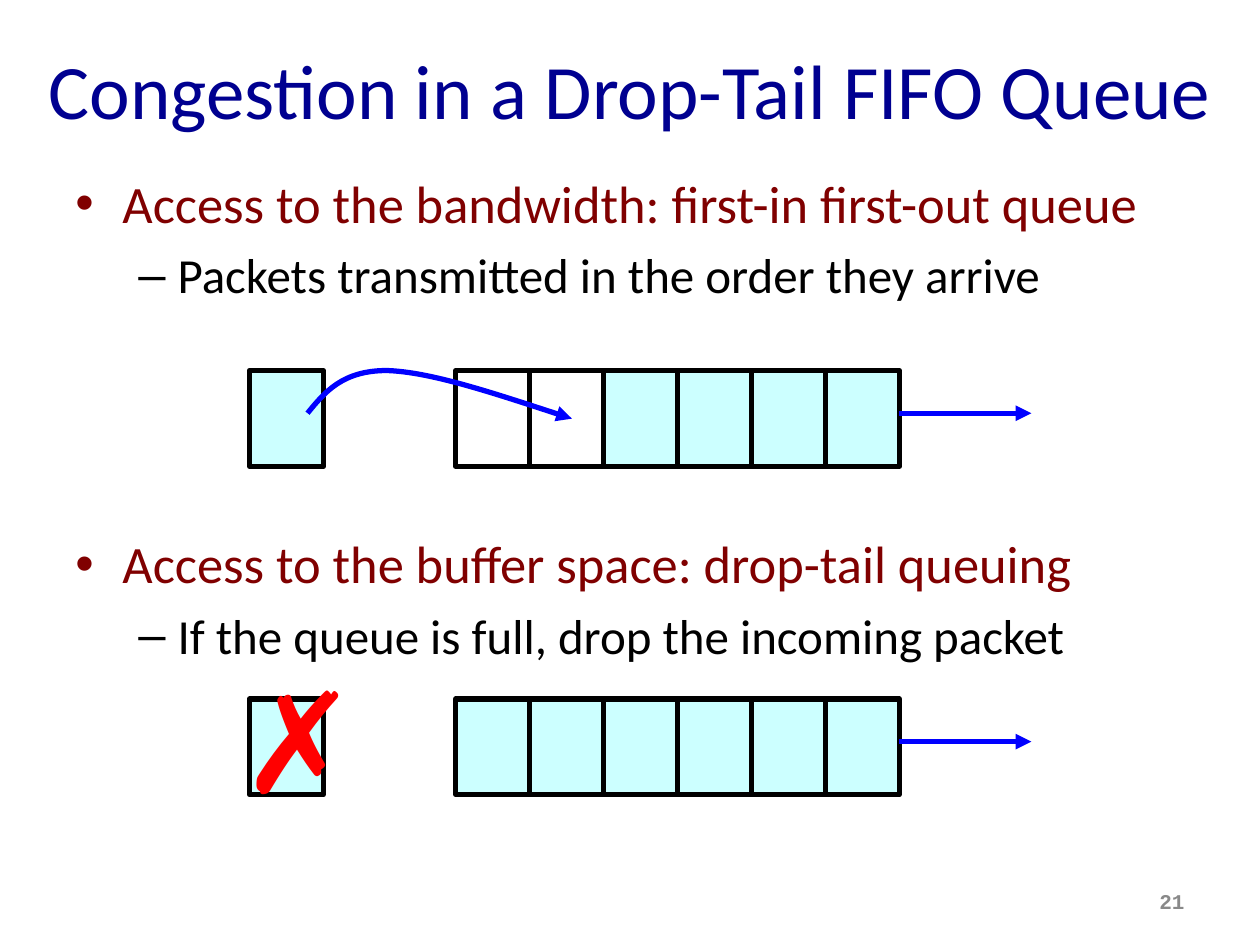
from lxml import etree
from pptx import Presentation
from pptx.dml.color import RGBColor
from pptx.enum.shapes import MSO_CONNECTOR, MSO_SHAPE
from pptx.enum.text import MSO_ANCHOR, PP_ALIGN
from pptx.oxml.ns import qn
from pptx.util import Cm, Pt

RECTANGLE = MSO_SHAPE.RECTANGLE
STRAIGHT = MSO_CONNECTOR.STRAIGHT
TOP, MIDDLE = MSO_ANCHOR.TOP, MSO_ANCHOR.MIDDLE
LEFT, CENTER, RIGHT = PP_ALIGN.LEFT, PP_ALIGN.CENTER, PP_ALIGN.RIGHT

NAVY, MAROON, BLACK, GRAY = "000090", "800000", "000000", "898989"
CYAN, BLUE, RED = "CCFFFF", "0000FF", "FF0000"

TITLE = {"name": "Calibri", "size": Pt(44), "color": NAVY}
NUMBER = {"name": "Courier New", "size": Pt(12), "bold": True, "color": GRAY}
CROSS = {"name": "Arial", "size": Pt(80), "bold": True, "color": RED}
# Bullet levels: character, left margin, hanging indent, font
LEVELS = [
    ("•", 0.95, 0.95, {"name": "Calibri", "size": Pt(30), "color": MAROON}),
    ("–", 2.06, 0.79, {"name": "Calibri", "size": Pt(28), "color": BLACK}),
]

# Queue diagram, in cm
CELL_WIDTH, CELL_HEIGHT, CELL_COUNT = 1.49, 1.93, 6
QUEUE_OFFSET = 4.16
ARROW_OFFSET, ARROW_LENGTH = 0.86, 2.66
# Start point, then two control points and an end point for each segment
ENTRY_CURVE = [(1.17, 0.86), (1.52, 0.43), (1.88, 0), (2.77, 0),
               (3.66, 0.03), (5.08, 0.51), (6.5, 0.97)]


def color(value):
    return RGBColor.from_string(value)


def set_font(run, style):
    for name, value in style.items():
        if name == "color":
            run.font.color.rgb = color(value)
        else:
            setattr(run.font, name, value)


def add_frame(slide, box, anchor=TOP, wrap=True):
    frame = slide.shapes.add_textbox(*map(Cm, box)).text_frame
    frame.word_wrap = wrap
    frame.vertical_anchor = anchor
    return frame


def add_label(slide, box, text, style, alignment, anchor=MIDDLE, wrap=True):
    paragraph = add_frame(slide, box, anchor, wrap).paragraphs[0]
    paragraph.alignment = alignment
    run = paragraph.add_run()
    run.text = text
    set_font(run, style)


def add_bullets(slide, box, lines):
    frame = add_frame(slide, box)
    for level, text in enumerate(lines):
        character, margin, hanging, style = LEVELS[level]
        paragraph = frame.paragraphs[0] if level == 0 else frame.add_paragraph()
        paragraph.level = level
        paragraph.alignment = LEFT
        paragraph.space_before = Pt(6)
        properties = paragraph._p.get_or_add_pPr()
        properties.set("marL", str(Cm(margin)))
        properties.set("indent", str(-Cm(hanging)))
        font = etree.SubElement(properties, qn("a:buFont"))
        font.set("typeface", "Arial")
        etree.SubElement(properties, qn("a:buChar")).set("char", character)
        run = paragraph.add_run()
        run.text = text
        set_font(run, style)


def set_line(shape, line_color, arrow=False):
    shape.line.color.rgb = color(line_color)
    shape.line.width = Pt(3)
    if arrow:
        tail = etree.SubElement(shape.line._get_or_add_ln(), qn("a:tailEnd"))
        tail.set("type", "triangle")


def add_cell(slide, left, top, filled):
    cell = slide.shapes.add_shape(
        RECTANGLE, Cm(left), Cm(top), Cm(CELL_WIDTH), Cm(CELL_HEIGHT))
    cell.shadow.inherit = False
    if filled:
        cell.fill.solid()
        cell.fill.fore_color.rgb = color(CYAN)
    else:
        cell.fill.background()
    set_line(cell, BLACK)


def add_entry_curve(slide, left, top):
    points = [(Cm(left + x), Cm(top + y)) for x, y in ENTRY_CURVE]
    builder = slide.shapes.build_freeform(*points[0])
    builder.add_line_segments(points[1:], close=False)
    curve = builder.convert_to_shape()
    curve.shadow.inherit = False
    curve.fill.background()
    # Join every three straight segments into one Bézier segment
    segments = list(curve._element.iter(qn("a:lnTo")))
    for start in range(0, len(segments), 3):
        first, *others = segments[start:start + 3]
        first.tag = qn("a:cubicBezTo")
        for segment in others:
            first.append(segment[0])
            segment.getparent().remove(segment)
    set_line(curve, BLUE, arrow=True)


def add_queue(slide, left, top, empty_cells):
    # Incoming packet and buffer
    add_cell(slide, left, top, True)
    queue_left = left + QUEUE_OFFSET
    for index in range(CELL_COUNT):
        add_cell(slide, queue_left + index * CELL_WIDTH, top,
                 index >= empty_cells)
    # Outgoing link
    start = queue_left + CELL_COUNT * CELL_WIDTH
    y = Cm(top + ARROW_OFFSET)
    arrow = slide.shapes.add_connector(
        STRAIGHT, Cm(start), y, Cm(start + ARROW_LENGTH), y)
    set_line(arrow, BLUE, arrow=True)
    etree.SubElement(arrow._element.spPr, qn("a:effectLst"))
    # Packet enters a free cell, or is dropped
    if empty_cells:
        add_entry_curve(slide, left, top)
    else:
        add_label(slide, (left - 0.43, top - 1.04, 2.18, 3.68), "✗", CROSS,
                  CENTER, TOP, wrap=False)


def main():
    presentation = Presentation()
    presentation.slide_width, presentation.slide_height = Cm(25.4), Cm(19.05)
    slide = presentation.slides.add_slide(presentation.slide_layouts[6])

    add_label(slide, (0.64, 0.2, 24.13, 3.18),
              "Congestion in a Drop-Tail FIFO Queue", TITLE, CENTER)
    add_bullets(slide, (1.27, 3.33, 23.5, 6.55),
                ["Access to the bandwidth: first-in first-out queue",
                 "Packets transmitted in the order they arrive"])
    add_queue(slide, 5.03, 7.47, empty_cells=2)
    add_bullets(slide, (1.27, 10.59, 23.7, 3.81),
                ["Access to the buffer space: drop-tail queuing",
                 "If the queue is full, drop the incoming packet"])
    add_queue(slide, 5.03, 14.09, empty_cells=0)
    add_label(slide, (18.21, 17.65, 5.92, 1.02), "21", NUMBER, RIGHT)

    presentation.save("out.pptx")


if __name__ == "__main__":
    main()
